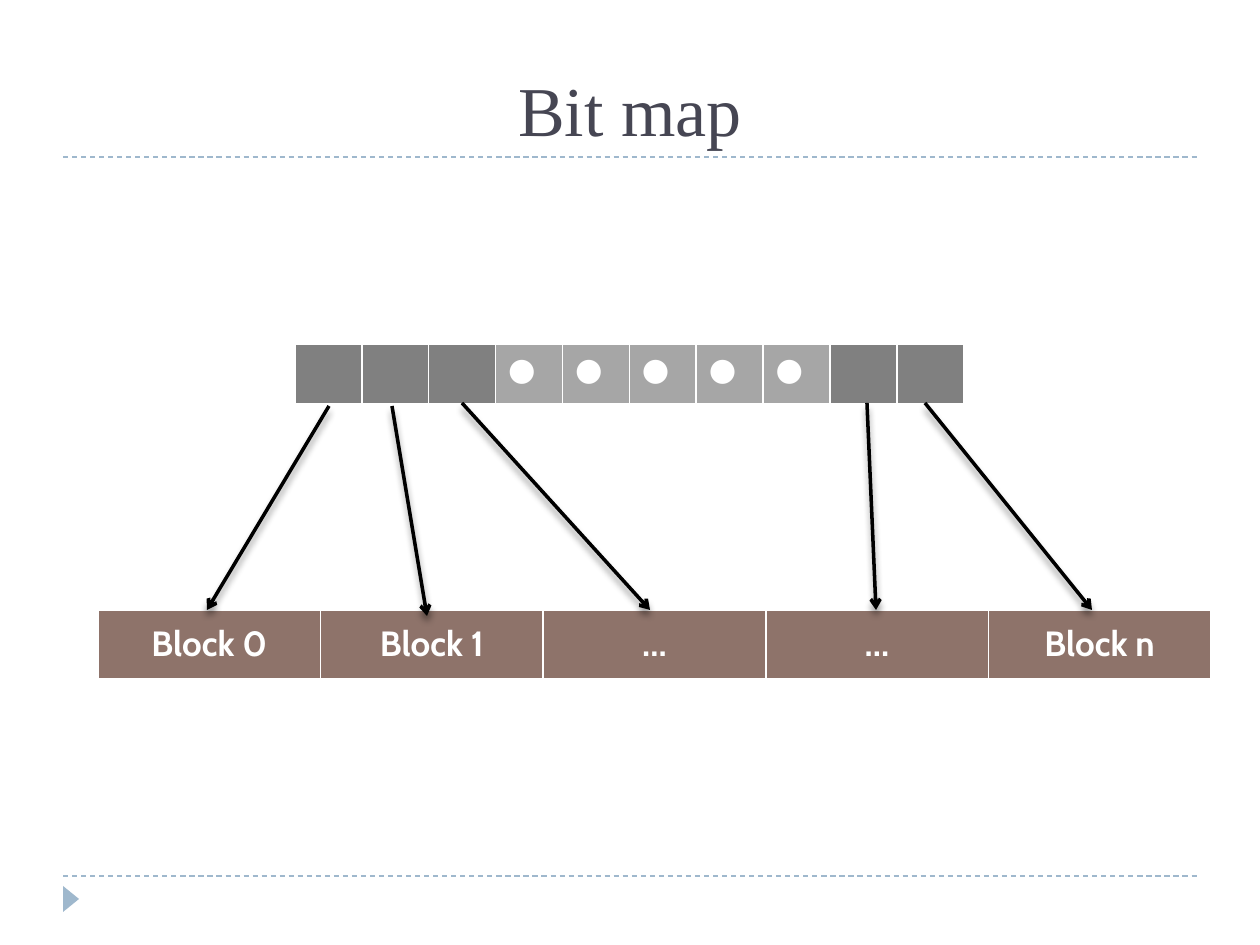
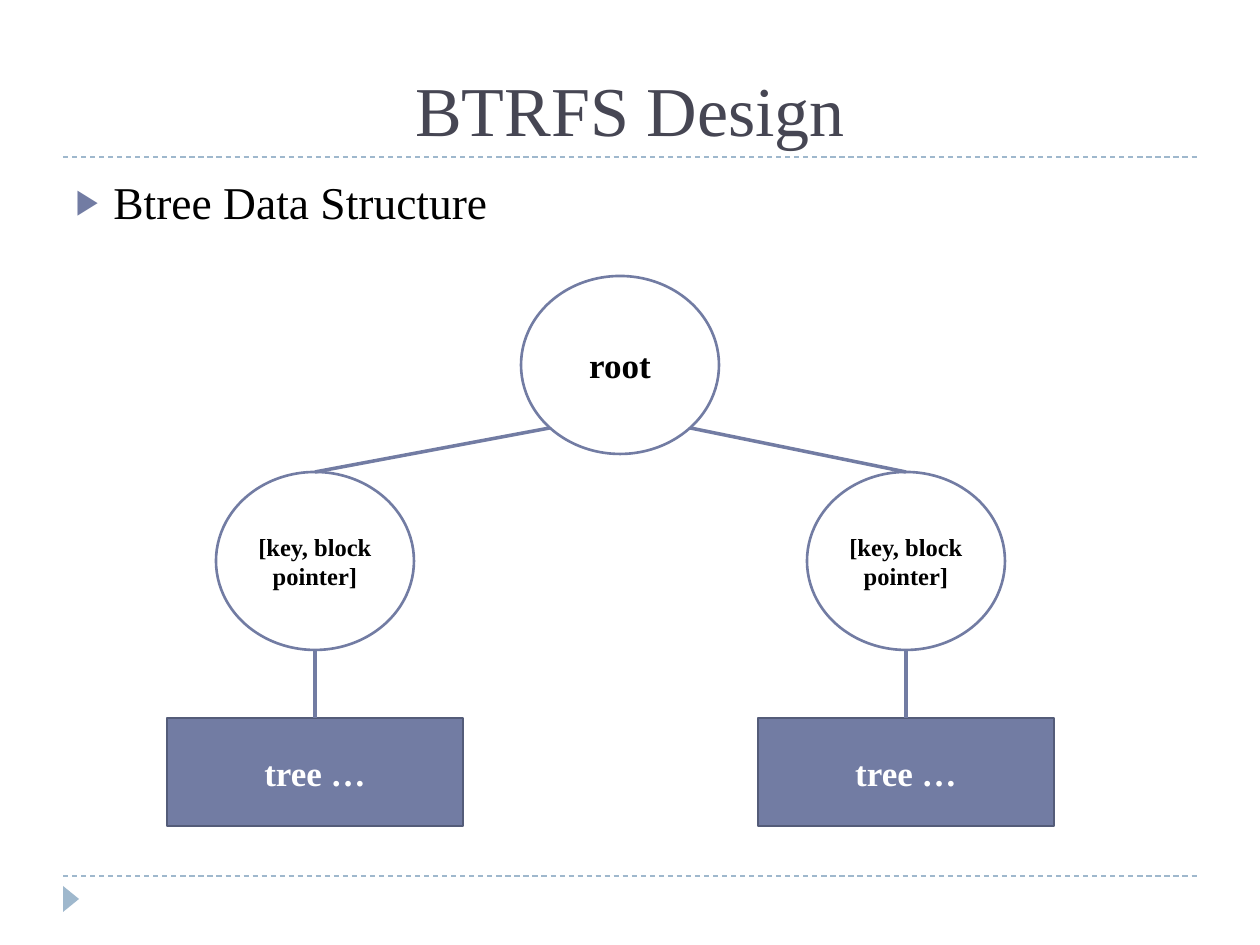
from math import cos, pi
from lxml import etree
from pptx import Presentation
from pptx import util as u
from pptx.dml.color import RGBColor
from pptx.enum import dml, shapes, text
from pptx.oxml.ns import qn

# Content
BITS = ["", "", "", "●", "●", "●", "●", "●", "", ""]
BLOCKS = ["Block 0", "Block 1", "…", "…", "Block n"]
BIT_ARROWS = [  # from a bit to its block
    ((329, 406), (207, 610)),
    ((392, 406), (427, 616)),
    ((462, 403), (650, 610)),
    ((867, 403), (876, 610)),
    ((925, 403), (1092, 610)),
]
ROOT = ("root", 620, 276)
CHILDREN = [("[key, block pointer]", "tree …", 315),
            ("[key, block pointer]", "tree …", 906)]

# Sizes in px, 126 to the inch
NODE_W, NODE_H = 198, 178
TREE_W, TREE_H = 296, 108
CHILD_TOP, TREE_TOP = 472, 718
RULE_TOPS = (157, 876)

# Style
SERIF, SANS = "Times New Roman", "Cabin"
WHITE = RGBColor(0xFF, 0xFF, 0xFF)
BLACK = RGBColor(0, 0, 0)
TITLE_INK = RGBColor(0x46, 0x46, 0x53)
PALE_BLUE = RGBColor(0x9F, 0xB8, 0xCD)
BLUE = RGBColor(0x72, 0x7C, 0xA3)
DARK_BLUE = RGBColor(0x54, 0x5C, 0x79)
USED_BIT = RGBColor(0x80, 0x80, 0x80)
OTHER_BIT = RGBColor(0xA6, 0xA6, 0xA6)
BROWN = RGBColor(0x8E, 0x73, 0x6A)


def px(*lengths):
    return [u.Emu(round(n * 914400 / 126)) for n in lengths]


def place(sp, *box):
    sp.left, sp.top, sp.width, sp.height = px(*box)


def write(tf, words, size, color, font=SERIF, bold=False, align=None):
    tf.word_wrap = True
    p = tf.paragraphs[0]
    p.text = words
    p.alignment = align
    p.font.name, p.font.size, p.font.bold = font, u.Pt(size), bold
    p.font.color.rgb = color
    return p


def add_line(s, start, end, color, width):
    line = s.shapes.add_connector(shapes.MSO_CONNECTOR.STRAIGHT, *px(*start, *end))
    line.line.color.rgb = color
    line.line.width = u.Pt(width)
    etree.SubElement(line._element.spPr, qn("a:effectLst"))
    return line


def add_arrow(s, start, end):
    arrow = add_line(s, start, end, BLACK, 2)
    etree.SubElement(arrow.line._get_or_add_ln(), qn("a:tailEnd"), type="arrow")
    effects = arrow._element.spPr.find(qn("a:effectLst"))
    shadow = etree.SubElement(effects, qn("a:outerShdw"), blurRad=str(u.Pt(4)),
                              dist=str(u.Pt(3.4)), dir="5400000", rotWithShape="0")
    ink = etree.SubElement(shadow, qn("a:srgbClr"), val=str(BLACK))
    etree.SubElement(ink, qn("a:alpha"), val="40000")


def add_shape(s, kind, box, fill, outline=None):
    sp = s.shapes.add_shape(kind, *px(*box))
    sp.shadow.inherit = False
    sp.fill.solid()
    sp.fill.fore_color.rgb = fill
    if outline is None:
        sp.line.fill.background()
    else:
        sp.line.color.rgb = outline
        sp.line.width = u.Pt(1.5)
    return sp


def add_label_shape(s, kind, box, words, size, color, fill, outline):
    sp = add_shape(s, kind, box, fill, outline)
    sp.text_frame.vertical_anchor = text.MSO_ANCHOR.MIDDLE
    write(sp.text_frame, words, size, color, bold=True, align=text.PP_ALIGN.CENTER)
    return sp


def add_node(s, words, center, top, size):
    return add_label_shape(s, shapes.MSO_SHAPE.OVAL,
                           (center - NODE_W / 2, top, NODE_W, NODE_H),
                           words, size, BLACK, WHITE, BLUE)


def add_row(s, box, words, fills, size, align=None, anchor=None):
    left, top, width, height = px(*box)
    table = s.shapes.add_table(1, len(words), left, top, width, height).table
    for i, (word, fill) in enumerate(zip(words, fills)):
        cell = table.cell(0, i)
        cell.fill.solid()
        cell.fill.fore_color.rgb = fill
        cell.vertical_anchor = anchor
        write(cell.text_frame, word, size, WHITE, SANS, True, align)


def add_slide(prs, layout, title):
    s = prs.slides.add_slide(prs.slide_layouts[layout])
    # Rules and corner mark
    for top in RULE_TOPS:
        rule = add_line(s, (63, top), (1197, top), PALE_BLUE, 0.75)
        rule.line.dash_style = dml.MSO_LINE.DASH
    mark = add_shape(s, shapes.MSO_SHAPE.ISOSCELES_TRIANGLE, (58, 891, 26, 16), PALE_BLUE)
    mark.rotation = 90
    # Title
    place(s.shapes.title, 63, 21, 1134, 136)
    tf = s.shapes.title.text_frame
    tf.auto_size = text.MSO_AUTO_SIZE.NONE
    tf.vertical_anchor = text.MSO_ANCHOR.BOTTOM
    write(tf, title, 40, TITLE_INK, align=text.PP_ALIGN.CENTER)
    return s


def add_bullet(p):
    p.space_before = u.Pt(6)
    pPr = p._p.get_or_add_pPr()
    pPr.set("marL", str(u.Inches(0.3)))
    pPr.set("indent", str(-u.Inches(0.3)))
    color = etree.Element(qn("a:buClr"))
    etree.SubElement(color, qn("a:srgbClr"), val=str(BLUE))
    size = etree.Element(qn("a:buSzPct"), val="76000")
    char = etree.Element(qn("a:buChar"), char="▶")
    for part in (color, size, char):
        pPr.find(qn("a:defRPr")).addprevious(part)


def build_bit_map(prs):
    s = add_slide(prs, 5, "Bit map")
    add_row(s, (295, 344, 669, 60), BITS,
            [OTHER_BIT if bit else USED_BIT for bit in BITS], 18)
    add_row(s, (98, 610, 1113, 69), BLOCKS, [BROWN] * len(BLOCKS), 20,
            text.PP_ALIGN.CENTER, text.MSO_ANCHOR.MIDDLE)
    for start, end in BIT_ARROWS:
        add_arrow(s, start, end)


def build_btree(prs):
    s = add_slide(prs, 1, "BTRFS Design")
    body = s.placeholders[1]
    place(body, 63, 168, 1134, 680)
    add_bullet(write(body.text_frame, "Btree Data Structure", 26, BLACK))

    # Tree of nodes
    words, root_x, root_top = ROOT
    add_node(s, words, root_x, root_top, 20)
    reach = cos(pi / 4) / 2  # diagonal point on the root's outline
    for key, tree, center in CHILDREN:
        node = add_node(s, key, center, CHILD_TOP, 14)
        box = add_label_shape(s, shapes.MSO_SHAPE.RECTANGLE,
                              (center - TREE_W / 2, TREE_TOP, TREE_W, TREE_H),
                              tree, 20, WHITE, BLUE, DARK_BLUE)
        side = 1 if center > root_x else -1
        start = (root_x + side * reach * NODE_W, root_top + (0.5 + reach) * NODE_H)
        branch = add_line(s, start, (center, CHILD_TOP), BLUE, 2)
        branch.end_connect(node, 0)
        stem = add_line(s, (center, CHILD_TOP + NODE_H), (center, TREE_TOP), BLUE, 2)
        stem.end_connect(box, 0)


def main():
    prs = Presentation()
    prs.slide_width, prs.slide_height = px(1260, 945)
    build_bit_map(prs)
    build_btree(prs)
    prs.save("out.pptx")


if __name__ == "__main__":
    main()
